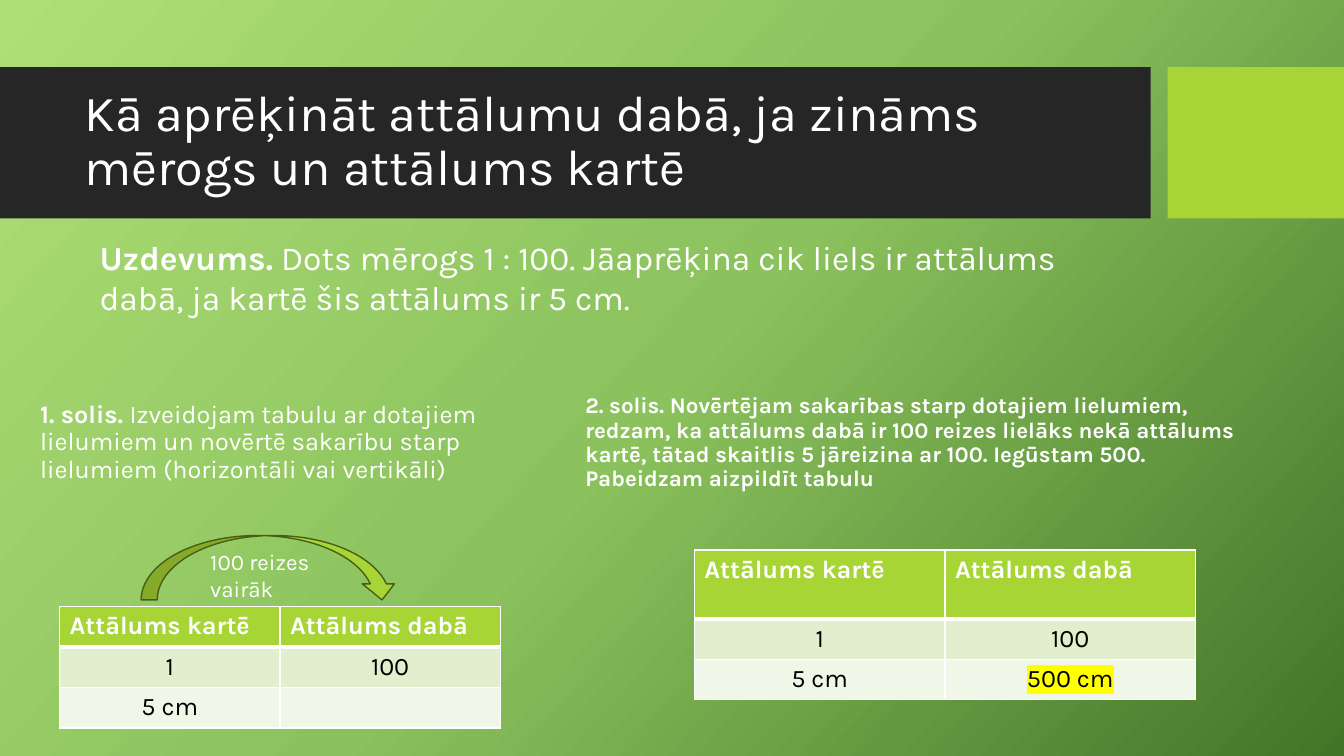
from copy import deepcopy
from lxml.etree import SubElement
from pptx import Presentation
from pptx.dml.color import RGBColor
from pptx.enum.shapes import MSO_SHAPE
from pptx.enum.text import MSO_ANCHOR, PP_ALIGN
from pptx.oxml.ns import qn
from pptx.util import Pt

WHITE = "FFFFFF"
BLACK = "000000"
LIME = "A7D535"
ROW_FILLS = [LIME, "E1EFCE", "F1F7E8"]
HEADINGS = ["Attālums kartē", "Attālums dabā"]


def color(value):
    return RGBColor.from_string(value)


def set_font(font, size, value):
    font.name = "Karla"
    font.size = Pt(size)
    font.color.rgb = color(value)


def add_background(slide, stops, angle):
    fill = slide.background.fill
    fill.gradient()
    fill.gradient_angle = angle
    stop_list = next(slide.element.iter(qn("a:gsLst")))
    stop_list.insert(1, deepcopy(stop_list[0]))
    for stop, (position, value) in zip(fill.gradient_stops, stops):
        stop.position = position
        stop.color.rgb = color(value)


def add_shape(slide, kind, box, fill, line=None):
    shape = slide.shapes.add_shape(kind, *map(Pt, box))
    shape.shadow.inherit = False
    shape.fill.solid()
    shape.fill.fore_color.rgb = color(fill)
    if line:
        shape.line.color.rgb = color(line)
        shape.line.width = Pt(1)
    else:
        shape.line.fill.background()


def add_text(slide, box, size, runs, anchor=MSO_ANCHOR.TOP, spacing=1.0):
    frame = slide.shapes.add_textbox(*map(Pt, box)).text_frame
    frame.word_wrap = True
    frame.vertical_anchor = anchor
    paragraph = frame.paragraphs[0]
    paragraph.line_spacing = spacing
    set_font(paragraph.font, size, WHITE)
    for text, bold in runs:
        run = paragraph.add_run()
        run.text = text
        run.font.bold = bold


def add_borders(cell, widths):
    properties = cell._tc.get_or_add_tcPr()
    for side, width in widths.items():
        line = SubElement(properties, qn(f"a:ln{side}"), w=str(Pt(width)))
        fill = SubElement(line, qn("a:solidFill"))
        SubElement(fill, qn("a:srgbClr"), val=WHITE)


def highlight(run, value):
    mark = SubElement(run.font._element, qn("a:highlight"))
    SubElement(mark, qn("a:srgbClr"), val=value)


def add_table(slide, left, top, column_width, row_heights, rows, marked=None):
    width = column_width * len(HEADINGS)
    frame = slide.shapes.add_table(
        len(rows), len(HEADINGS), Pt(left), Pt(top), Pt(width), Pt(sum(row_heights))
    )
    table = frame.table
    table.first_row = False
    table.horz_banding = False
    for column in table.columns:
        column.width = Pt(column_width)
    for index, values in enumerate(rows):
        header = index == 0
        table.rows[index].height = Pt(row_heights[index])
        for column, text in enumerate(values):
            cell = table.cell(index, column)
            add_borders(cell, {"L": 1, "R": 1, "T": 3 if index == 1 else 1, "B": 3 if header else 1})
            cell.fill.solid()
            cell.fill.fore_color.rgb = color(ROW_FILLS[index])
            paragraph = cell.text_frame.paragraphs[0]
            paragraph.alignment = PP_ALIGN.LEFT if header else PP_ALIGN.CENTER
            set_font(paragraph.font, 18, WHITE if header else BLACK)
            paragraph.font.bold = header
            if text:
                run = paragraph.add_run()
                run.text = text
                if text == marked:
                    highlight(run, "FFFF00")


def main():
    presentation = Presentation()
    presentation.slide_width = Pt(960)
    presentation.slide_height = Pt(540)
    slide = presentation.slides.add_slide(presentation.slide_layouts[6])

    add_background(slide, [(0, "AFDE77"), (0.5, "8BC25D"), (1, "437528")], 318)
    add_shape(slide, MSO_SHAPE.RECTANGLE, (0, 48, 822, 108), "262626")
    add_shape(slide, MSO_SHAPE.RECTANGLE, (834, 48, 126, 108), LIME)
    add_text(slide, (53.5, 59, 757, 85), 36, [
        ("Kā aprēķināt attālumu dabā, ja zināms mērogs un attālums kartē", False),
    ], MSO_ANCHOR.MIDDLE, 0.9)
    add_text(slide, (64, 165.6, 713, 94), 24, [
        ("Uzdevums.", True),
        (" Dots mērogs 1 : 100. Jāaprēķina cik liels ir attālums dabā, ja kartē šis attālums ir 5 cm.", False),
    ])
    add_text(slide, (21.6, 286, 336, 63), 18, [
        ("1. solis. ", True),
        ("Izveidojam tabulu ar dotajiem lielumiem un novērtē sakarību starp "
         "lielumiem (horizontāli vai vertikāli)", False),
    ], MSO_ANCHOR.BOTTOM, 0.9)
    add_text(slide, (411, 299.5, 486, 55), 16, [
        ("2. solis. Novērtējam sakarības starp dotajiem lielumiem, redzam, ka attālums dabā "
         "ir 100 reizes lielāks nekā attālums kartē, tātad skaitlis 5 jāreizina ar 100. "
         "Iegūstam 500. Pabeidzam aizpildīt tabulu", True),
    ], MSO_ANCHOR.BOTTOM, 0.9)

    add_table(slide, 42.6, 433, 157.4, [29, 29, 29],
              [HEADINGS, ["1", "100"], ["5 cm", ""]])
    add_table(slide, 496, 392.8, 179, [49.4, 28.4, 28.4],
              [HEADINGS, ["1", "100"], ["5 cm", "500 cm"]], "500 cm")

    add_shape(slide, MSO_SHAPE.CURVED_DOWN_ARROW, (100.8, 382.5, 183.6, 46), LIME, "495D17")
    add_text(slide, (143, 388, 115, 46), 16, [("100 reizes vairāk", False)])

    presentation.save("out.pptx")


if __name__ == "__main__":
    main()
